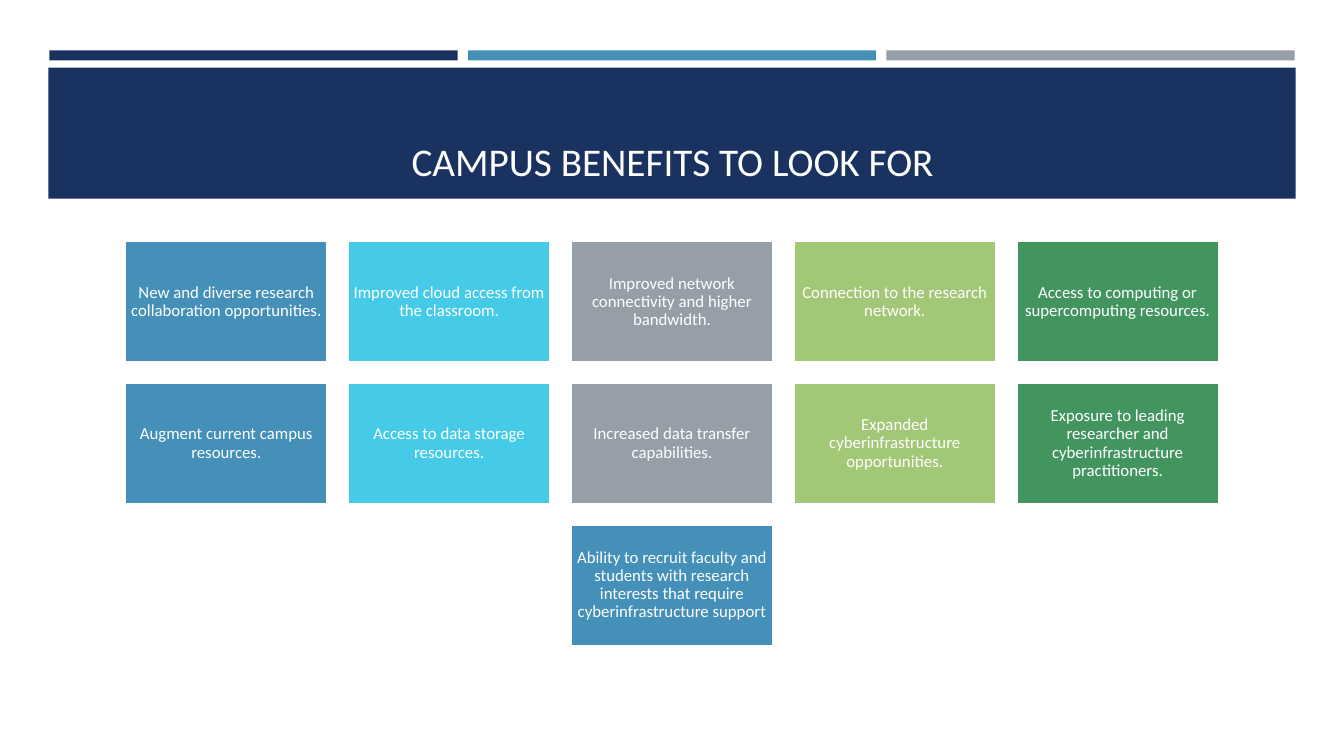
from dataclasses import dataclass

from pptx import Presentation
from pptx.dml.color import RGBColor
from pptx.enum.shapes import MSO_SHAPE
from pptx.enum.text import MSO_ANCHOR, MSO_AUTO_SIZE, PP_ALIGN
from pptx.util import Inches, Pt

RECT = MSO_SHAPE.RECTANGLE
MIDDLE, BOTTOM = MSO_ANCHOR.MIDDLE, MSO_ANCHOR.BOTTOM
CENTER = PP_ALIGN.CENTER
NO_FIT = MSO_AUTO_SIZE.NONE
TITLE_ONLY = 5


@dataclass(frozen=True)
class Theme:
    """Colours, font and type sizes of the slide."""
    navy: str = "1A3260"
    blue: str = "4590B8"
    cyan: str = "45CBE8"
    gray: str = "969FA7"
    lime: str = "A2C777"
    green: str = "42955F"
    white: str = "FFFFFF"
    title_text: str = "FFFEFF"
    font: str = "Calibri"
    title_size: int = 28
    card_size: int = 12


THEME = Theme()
BENEFITS = [
    "New and diverse research collaboration opportunities.",
    "Improved cloud access from the classroom.",
    "Improved network connectivity and higher bandwidth.",
    "Connection to the research network.",
    "Access to computing or supercomputing resources.",
    "Augment current campus resources.",
    "Access to data storage resources.",
    "Increased data transfer capabilities.",
    "Expanded cyberinfrastructure opportunities.",
    "Exposure to leading researcher and cyberinfrastructure practitioners.",
    "Ability to recruit faculty and students with research interests "
    "that require cyberinfrastructure support",
]


def add_rect(s, x, y, w, h, fill, line=None):
    """Add a flat rectangle, outlined only when a line colour is given."""
    sp = s.shapes.add_shape(RECT, Inches(x), Inches(y), Inches(w), Inches(h))
    sp.shadow.inherit = False
    sp.fill.solid()
    sp.fill.fore_color.rgb = RGBColor.from_string(fill)
    if line:
        sp.line.color.rgb = RGBColor.from_string(line)
        sp.line.width = Pt(1.75)
    else:
        sp.line.fill.background()
    return sp


def set_text(sp, text, *, size, color, anchor, inset=(0.1, 0.05), spacing=None):
    """Write one centred paragraph into a shape."""
    tf = sp.text_frame
    tf.word_wrap = True
    tf.auto_size = NO_FIT
    tf.vertical_anchor = anchor
    tf.margin_left = tf.margin_right = Inches(inset[0])
    tf.margin_top = tf.margin_bottom = Inches(inset[1])
    p = tf.paragraphs[0]
    p.alignment = CENTER
    p.line_spacing = spacing
    r = p.add_run()
    r.text = text
    r.font.name = THEME.font
    r.font.size = Pt(size)
    r.font.color.rgb = RGBColor.from_string(color)


def add_stripes(s, x, y, w, h, gap=0.1):
    """Divide the box into three coloured stripes."""
    colors = (THEME.navy, THEME.blue, THEME.gray)
    stripe_w = (w - gap * (len(colors) - 1)) / len(colors)
    for i, color in enumerate(colors):
        add_rect(s, x + i * (stripe_w + gap), y, stripe_w, h, color)


def add_title_band(s, x, y, w, h, text):
    """Fill the box with a navy band and set the title on it."""
    add_rect(s, x, y, w, h, THEME.navy)
    title = s.shapes.title
    title.left, title.top = Inches(x + 0.16), Inches(y + 0.1)
    title.width, title.height = Inches(w - 0.31), Inches(h - 0.19)
    set_text(title, text, size=THEME.title_size, color=THEME.title_text,
             anchor=BOTTOM)
    title.element.getparent().append(title.element)


def add_benefits(s, x, y, w, h, benefits, gap=0.2):
    """Lay the benefit cards out in the box, centring a short last row."""
    colors = (THEME.blue, THEME.cyan, THEME.gray, THEME.lime, THEME.green)
    cols = len(colors)
    rows = [benefits[i:i + cols] for i in range(0, len(benefits), cols)]
    card_w = (w - gap * (cols - 1)) / cols
    card_h = (h - gap * (len(rows) - 1)) / len(rows)
    for i, row in enumerate(rows):
        left = x + (cols - len(row)) * (card_w + gap) / 2
        for j, (text, color) in enumerate(zip(row, colors)):
            card = add_rect(s, left + j * (card_w + gap),
                            y + i * (card_h + gap), card_w, card_h,
                            color, THEME.white)
            set_text(card, text, size=THEME.card_size, color=THEME.white,
                     anchor=MIDDLE, inset=(0.05, 0.05), spacing=0.9)


def main():
    """Build the slide and save it."""
    prs = Presentation()
    prs.slide_width, prs.slide_height = Inches(13.33), Inches(7.5)
    s = prs.slides.add_slide(prs.slide_layouts[TITLE_ONLY])
    add_stripes(s, 0.49, 0.5, 12.35, 0.1)
    add_title_band(s, 0.48, 0.67, 12.37, 1.3, "CAMPUS BENEFITS TO LOOK FOR")
    add_benefits(s, 1.24, 2.39, 10.85, 4.02, BENEFITS)
    prs.save("out.pptx")


if __name__ == "__main__":
    main()
